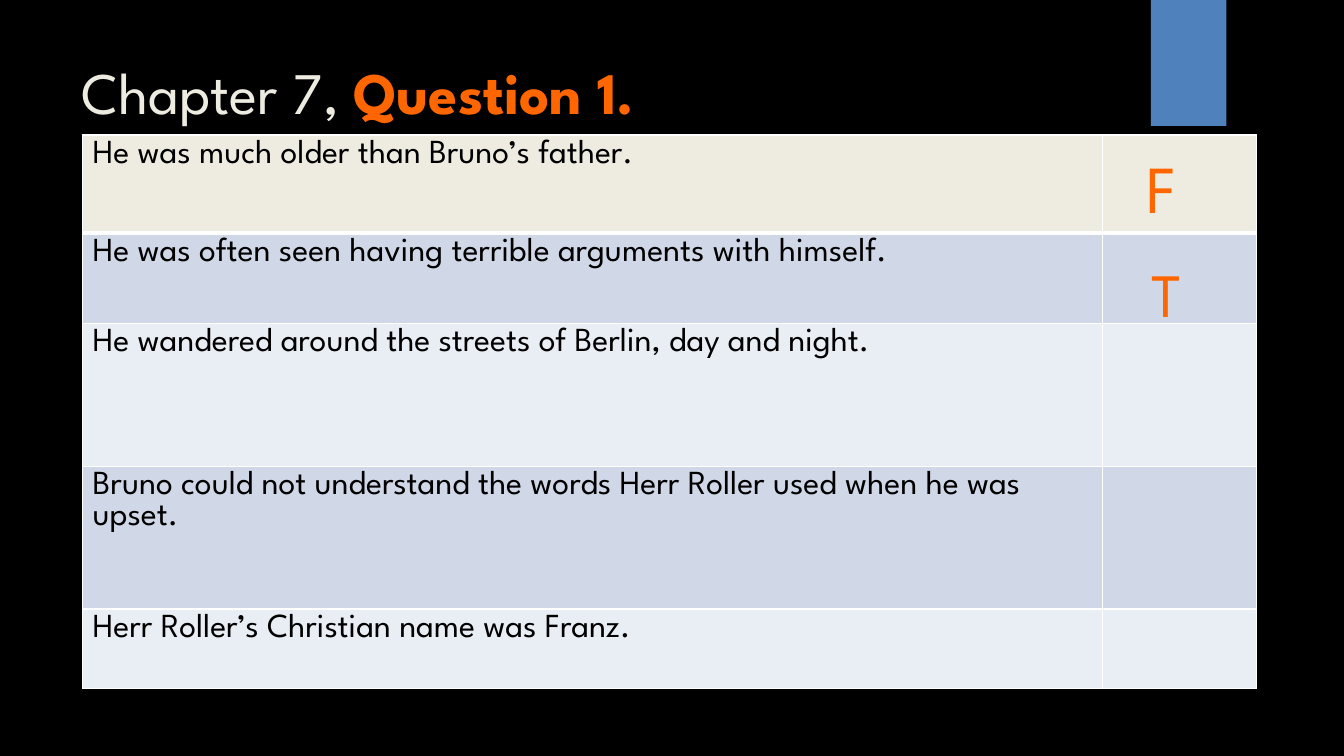
from lxml import etree
from pptx import Presentation
from pptx.dml.color import RGBColor
from pptx.enum.shapes import MSO_SHAPE
from pptx.enum.text import MSO_ANCHOR, PP_ALIGN
from pptx.oxml.ns import qn
from pptx.util import Pt

RECTANGLE = MSO_SHAPE.RECTANGLE
TOP = MSO_ANCHOR.TOP
LEFT, CENTER = PP_ALIGN.LEFT, PP_ALIGN.CENTER
FONT = "League Spartan"
COLORS = {
    "background": "000000", "tab": "4F81BD", "cream": "EEECE1",
    "orange": "FF6600", "text": "000000", "border": "FFFFFF",
    "band_dark": "D0D8E8", "band_light": "E9EDF4",
}
STATEMENTS = [
    "He was much older than Bruno’s father.",
    "He was often seen having terrible arguments with himself.",
    "He wandered around the streets of Berlin, day and night.",
    "Bruno could not understand the words Herr Roller used when he was upset.",
    "Herr Roller’s Christian name was Franz.",
]
ROW_HEIGHTS = [70, 64.5, 102, 102, 57]
COLUMN_WIDTHS = [728.8, 109.7]


def rgb(name):
    return RGBColor.from_string(COLORS[name])


def style(font, size, color):
    font.name = FONT
    font.size = Pt(size)
    font.color.rgb = rgb(color)


def add_text(slide, box, runs, size, align):
    """Add one line of (text, colour, bold) runs."""
    tf = slide.shapes.add_textbox(*map(Pt, box)).text_frame
    tf.word_wrap = True
    tf.vertical_anchor = TOP
    p = tf.paragraphs[0]
    p.alignment = align
    for text, color, bold in runs:
        r = p.add_run()
        r.text = text
        style(r.font, size, color)
        r.font.bold = bold


def add_corner_tab(slide, box):
    sp = slide.shapes.add_shape(RECTANGLE, *map(Pt, box))
    sp.shadow.inherit = False
    sp.fill.solid()
    sp.fill.fore_color.rgb = rgb("tab")
    sp.line.fill.background()


def set_borders(cell, top, bottom):
    tc_pr = cell._tc.get_or_add_tcPr()
    widths = {"a:lnL": 1, "a:lnR": 1, "a:lnT": top, "a:lnB": bottom}
    for i, (tag, width) in enumerate(widths.items()):
        ln = etree.Element(qn(tag), w=str(Pt(width)))
        fill = etree.SubElement(ln, qn("a:solidFill"))
        etree.SubElement(fill, qn("a:srgbClr"), val=COLORS["border"])
        tc_pr.insert(i, ln)


def add_statements(slide, left, top):
    table = slide.shapes.add_table(
        len(STATEMENTS), len(COLUMN_WIDTHS), Pt(left), Pt(top),
        Pt(sum(COLUMN_WIDTHS)), Pt(sum(ROW_HEIGHTS))).table
    for column, width in zip(table.columns, COLUMN_WIDTHS):
        column.width = Pt(width)
    for i, (row, height) in enumerate(zip(table.rows, ROW_HEIGHTS)):
        row.height = Pt(height)
        band = "cream" if i == 0 else ("band_light", "band_dark")[i % 2]
        row.cells[0].text = STATEMENTS[i]
        for cell in row.cells:
            cell.fill.solid()
            cell.fill.fore_color.rgb = rgb(band)
            set_borders(cell, 3 if i == 1 else 1, 3 if i == 0 else 1)
            p = cell.text_frame.paragraphs[0]
            style(p.font, 24, "text")
            p.font.bold = False


def build_question_slide(prs):
    slide = prs.slides.add_slide(prs.slide_layouts[6])
    slide.background.fill.solid()
    slide.background.fill.fore_color.rgb = rgb("background")
    add_corner_tab(slide, (822, 0, 54, 90))
    add_statements(slide, 59, 96.5)
    add_text(slide, (51, 36, 741, 52.5),
             [("Chapter 7, ", "cream", False), ("Question 1.", "orange", True)],
             42, LEFT)
    add_text(slide, (783.5, 101, 92, 65.5), [("F", "orange", False)], 48, CENTER)
    add_text(slide, (791.5, 179.5, 84, 60.5), [("T", "orange", False)], 44, CENTER)


def main():
    prs = Presentation()
    prs.slide_width, prs.slide_height = Pt(960), Pt(540)
    build_question_slide(prs)
    prs.save("out.pptx")


if __name__ == "__main__":
    main()
